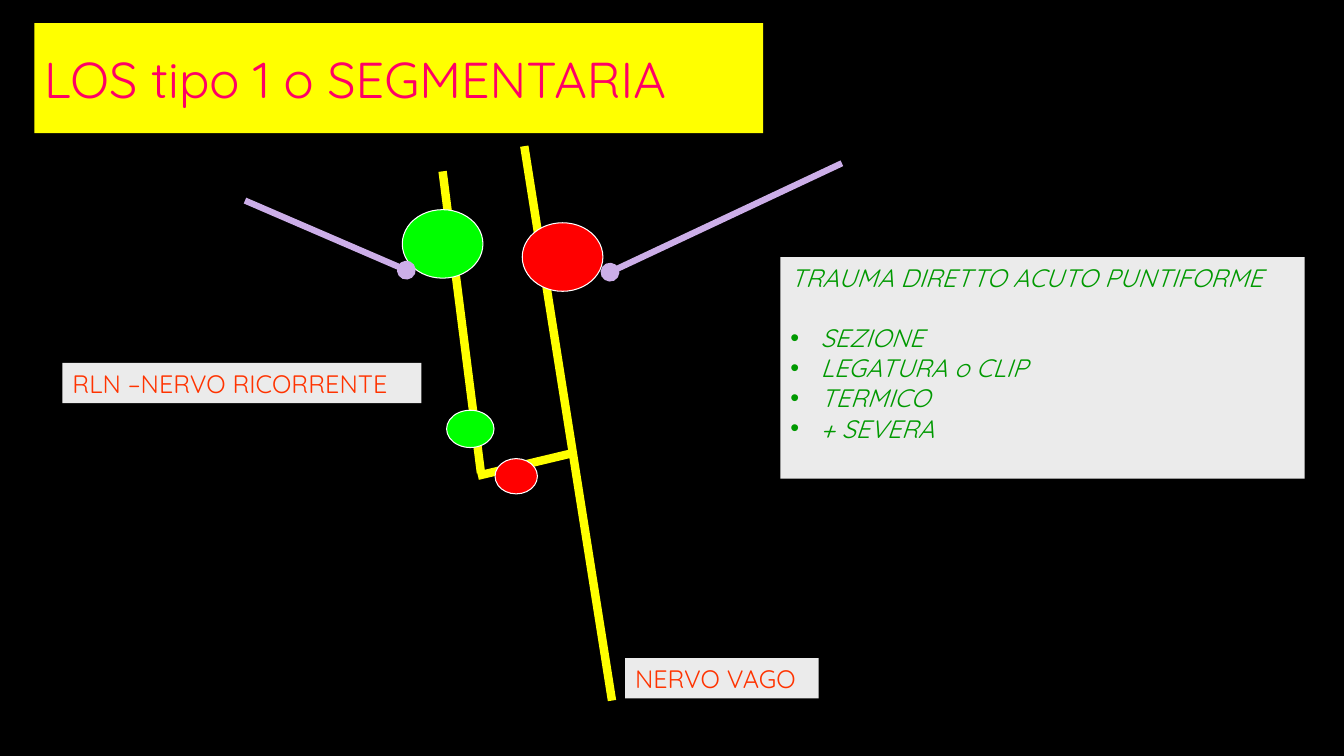
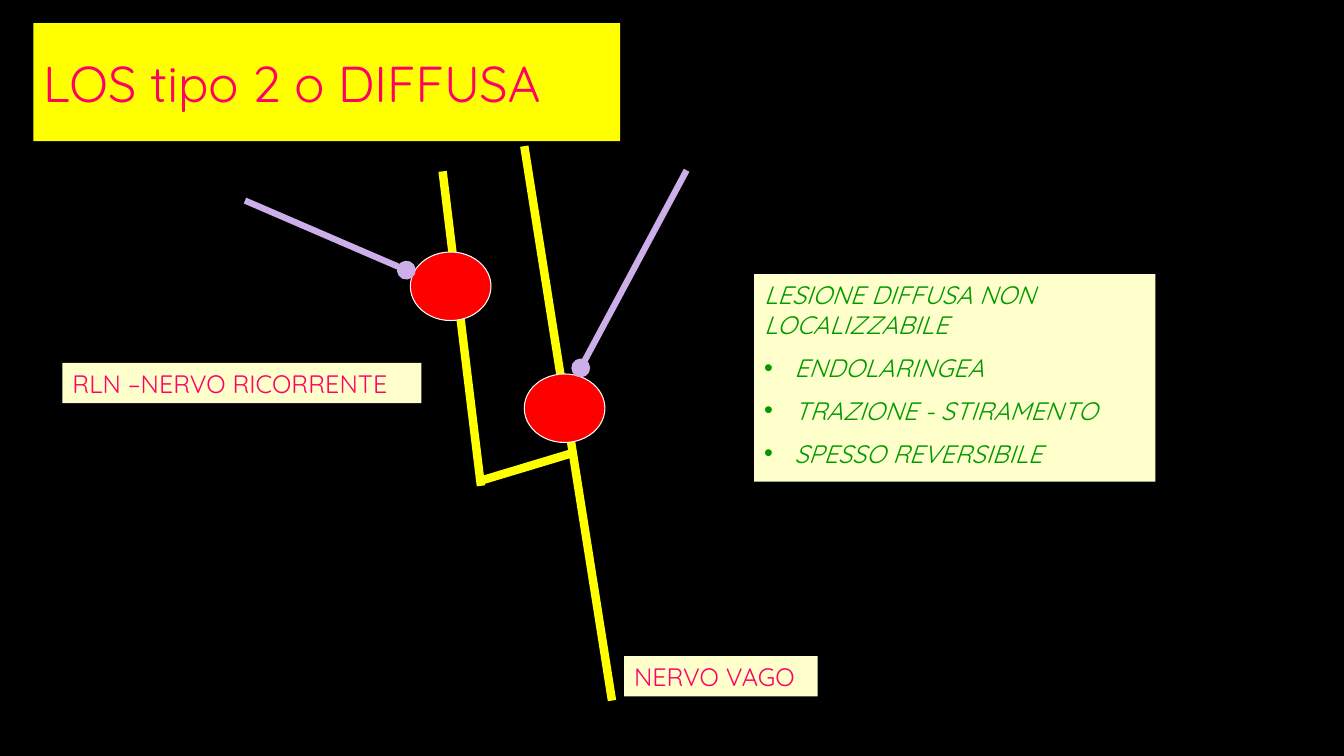
from dataclasses import dataclass

from lxml import etree
from pptx import Presentation
from pptx import util as u
from pptx.dml.color import RGBColor
from pptx.enum import shapes, text
from pptx.oxml.ns import qn

BLACK = RGBColor(0x00, 0x00, 0x00)
WHITE = RGBColor(0xFF, 0xFF, 0xFF)
YELLOW = RGBColor(0xFF, 0xFF, 0x00)
PINK = RGBColor(0xFF, 0x00, 0x66)
ORANGE = RGBColor(0xFF, 0x33, 0x00)
GREEN = RGBColor(0x00, 0xFF, 0x00)
DARK_GREEN = RGBColor(0x00, 0x99, 0x00)
RED = RGBColor(0xFF, 0x00, 0x00)
LILAC = RGBColor(0xCC, 0xAE, 0xE8)
GREY = RGBColor(0xEB, 0xEB, 0xEB)
CREAM = RGBColor(0xFF, 0xFF, 0xCC)

FONT = "Quicksand"
TITLE_STYLE = {"name": FONT, "size": u.Pt(36), "color": PINK}
LABEL_STYLE = {"name": FONT, "size": u.Pt(18)}
PANEL_STYLE = {"name": FONT, "size": u.Pt(18), "italic": True, "color": DARK_GREEN}
BULLET_INDENT = u.Inches(0.3)

Point = tuple[float, float]
Box = tuple[float, float, float, float]


@dataclass(frozen=True)
class Line:
    start: Point
    end: Point
    color: RGBColor = YELLOW
    width: float = 6
    oval_tip: bool = False


@dataclass(frozen=True)
class Lesion:
    left: float
    top: float
    color: RGBColor
    width: float = 0.8
    height: float = 0.68


@dataclass(frozen=True)
class Paragraph:
    words: str
    bullet: bool = False
    space_before: float = 0


@dataclass(frozen=True)
class LosType:
    title: str
    title_box: Box
    recurrent_end: Point
    branch_start: Point
    lesions: list[Lesion]
    vagus_pointer: Line
    vagus_label_at: Point
    panel_box: Box
    panel: list[Paragraph]
    panel_color: RGBColor
    label_color: RGBColor


def pointer(start: Point, end: Point) -> Line:
    return Line(start, end, LILAC, 4.5, True)


VAGUS = Line((5.2, 1.45), (6.07, 6.95))
RECURRENT_START = (4.39, 1.7)
BRANCH_END = (5.66, 4.5)
RECURRENT_POINTER = pointer((2.43, 1.99), (4.03, 2.68))

LOS_TYPES = [
    LosType(
        title="LOS tipo 1 o SEGMENTARIA",
        title_box=(0.34, 0.23, 7.23, 1.09),
        recurrent_end=(4.77, 4.69),
        branch_start=(4.74, 4.72),
        lesions=[
            Lesion(3.99, 2.08, GREEN),
            Lesion(5.18, 2.21, RED),
            Lesion(4.43, 4.07, GREEN, 0.47, 0.37),
            Lesion(4.91, 4.55, RED, 0.42, 0.35),
        ],
        vagus_pointer=pointer((8.35, 1.62), (6.05, 2.7)),
        vagus_label_at=(6.2, 6.53),
        panel_box=(7.74, 2.55, 5.2, 2.2),
        panel=[
            Paragraph("TRAUMA DIRETTO ACUTO PUNTIFORME"),
            Paragraph("SEZIONE", True, 21.5),
            Paragraph("LEGATURA o CLIP", True),
            Paragraph("TERMICO", True),
            Paragraph("+ SEVERA", True),
        ],
        panel_color=GREY,
        label_color=ORANGE,
    ),
    LosType(
        title="LOS tipo 2 o DIFFUSA",
        title_box=(0.33, 0.23, 5.82, 1.17),
        recurrent_end=(4.77, 4.82),
        branch_start=(4.73, 4.78),
        lesions=[Lesion(4.07, 2.5, RED), Lesion(5.2, 3.71, RED)],
        vagus_pointer=pointer((6.81, 1.69), (5.76, 3.65)),
        vagus_label_at=(6.19, 6.51),
        panel_box=(7.48, 2.72, 3.98, 2.06),
        panel=[
            Paragraph("LESIONE DIFFUSA NON LOCALIZZABILE"),
            Paragraph("ENDOLARINGEA", True, 9),
            Paragraph("TRAZIONE - STIRAMENTO", True, 9),
            Paragraph("SPESSO REVERSIBILE", True, 9),
        ],
        panel_color=CREAM,
        label_color=PINK,
    ),
]


def apply_style(font, style: dict) -> None:
    for key, value in style.items():
        if key == "color":
            font.color.rgb = value
        else:
            setattr(font, key, value)


def add_bullet(paragraph) -> None:
    properties = paragraph._p.get_or_add_pPr()
    properties.set("marL", str(BULLET_INDENT))
    properties.set("indent", str(-BULLET_INDENT))
    etree.SubElement(properties, qn("a:buFont")).set("typeface", "Arial")
    etree.SubElement(properties, qn("a:buChar")).set("char", "•")


def draw_text(slide, box: Box, fill: RGBColor, paragraphs: list[Paragraph],
              style: dict, anchor=text.MSO_ANCHOR.TOP) -> None:
    panel = slide.shapes.add_textbox(*map(u.Inches, box))
    panel.fill.solid()
    panel.fill.fore_color.rgb = fill
    frame = panel.text_frame
    frame.word_wrap = True
    frame.vertical_anchor = anchor
    for index, item in enumerate(paragraphs):
        paragraph = frame.add_paragraph() if index else frame.paragraphs[0]
        if item.space_before:
            paragraph.space_before = u.Pt(item.space_before)
        if item.bullet:
            add_bullet(paragraph)
        run = paragraph.add_run()
        run.text = item.words
        apply_style(run.font, style)


def draw_line(slide, line: Line) -> None:
    connector = slide.shapes.add_connector(
        shapes.MSO_CONNECTOR.STRAIGHT, *map(u.Inches, line.start + line.end))
    connector.line.color.rgb = line.color
    connector.line.width = u.Pt(line.width)
    if line.oval_tip:
        outline = connector.line._get_or_add_ln()
        etree.SubElement(outline, qn("a:tailEnd")).set("type", "oval")
    etree.SubElement(connector._element.spPr, qn("a:effectLst"))


def draw_lesion(slide, lesion: Lesion) -> None:
    box = (lesion.left, lesion.top, lesion.width, lesion.height)
    spot = slide.shapes.add_shape(shapes.MSO_SHAPE.OVAL, *map(u.Inches, box))
    spot.shadow.inherit = False
    spot.fill.solid()
    spot.fill.fore_color.rgb = lesion.color
    spot.line.color.rgb = WHITE
    spot.line.width = u.Pt(0.75)


def draw_los_type(slide, los: LosType) -> None:
    slide.background.fill.solid()
    slide.background.fill.fore_color.rgb = BLACK
    draw_text(slide, los.title_box, YELLOW, [Paragraph(los.title)],
              TITLE_STYLE, text.MSO_ANCHOR.MIDDLE)
    for nerve in (Line(RECURRENT_START, los.recurrent_end),
                  Line(los.branch_start, BRANCH_END), VAGUS):
        draw_line(slide, nerve)
    for lesion in los.lesions:
        draw_lesion(slide, lesion)
    label_style = LABEL_STYLE | {"color": los.label_color}
    for box, words in (((0.62, 3.6, 3.56, 0.4), "RLN –NERVO RICORRENTE"),
                       ((*los.vagus_label_at, 1.92, 0.4), "NERVO VAGO")):
        draw_text(slide, box, los.panel_color, [Paragraph(words)], label_style)
    draw_text(slide, los.panel_box, los.panel_color, los.panel, PANEL_STYLE)
    for instrument in (los.vagus_pointer, RECURRENT_POINTER):
        draw_line(slide, instrument)


def main() -> None:
    deck = Presentation()
    deck.slide_width, deck.slide_height = u.Inches(13.33), u.Inches(7.5)
    for los in LOS_TYPES:
        draw_los_type(deck.slides.add_slide(deck.slide_layouts[6]), los)
    deck.save("out.pptx")


if __name__ == "__main__":
    main()
